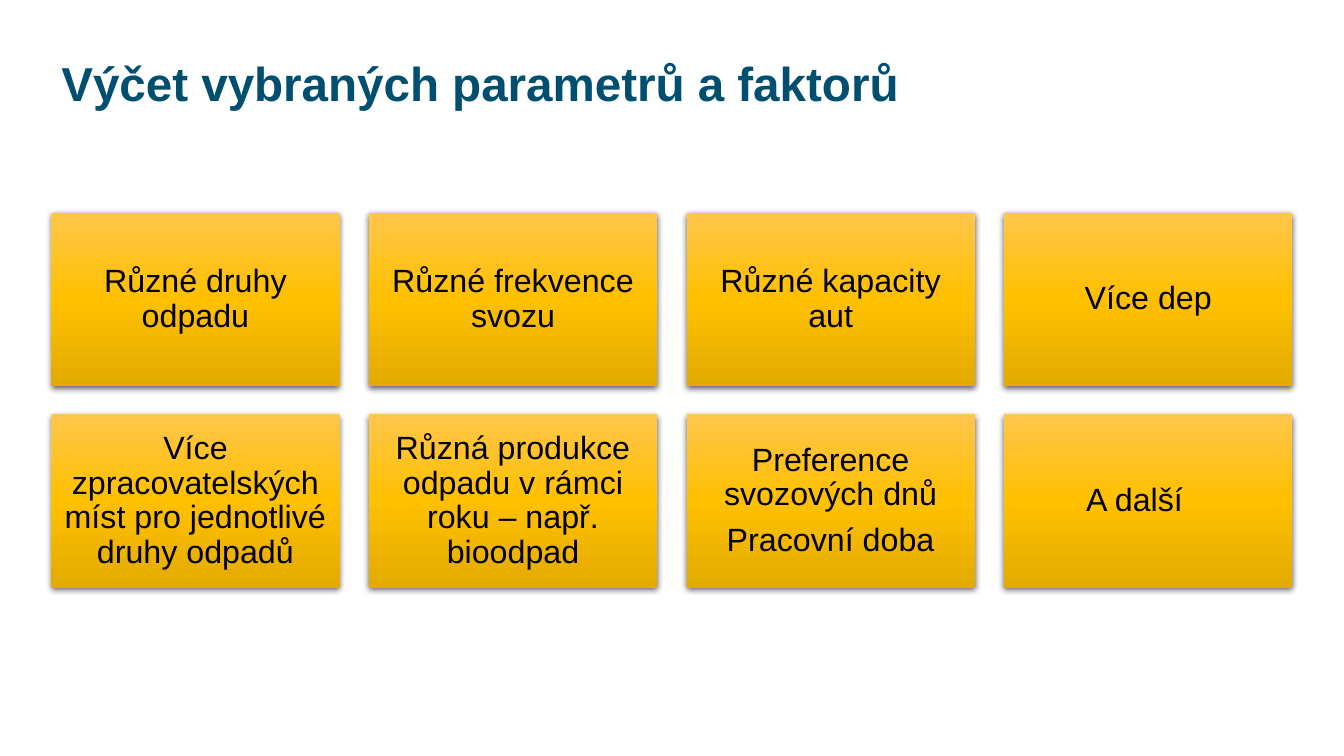
from copy import deepcopy

from pptx import Presentation, util as u
from pptx.dml.color import RGBColor
from pptx.enum import shapes, text
from pptx.oxml import parse_xml
from pptx.oxml.ns import nsdecls, qn

LEFT, TOP = 0.51, 2.11
CARD_W, CARD_H = 2.86, 1.72
STEP_X, STEP_Y = 3.15, 2.0
COLUMNS = 4
INSET = 0.1
GOLD = [(0, "FFC64B"), (0.5, "FFC000"), (1, "E3AB00")]
CARDS = [
    ["Různé druhy odpadu"],
    ["Různé frekvence svozu"],
    ["Různé kapacity aut"],
    ["Více dep"],
    ["Více zpracovatelských míst pro jednotlivé druhy odpadů"],
    ["Různá produkce odpadu v rámci roku – např. bioodpad"],
    ["Preference svozových dnů", "Pracovní doba"],
    ["A další"],
]


def color(value):
    return RGBColor.from_string(value)


def write(s, lines, size, ink, align, bold=False, after=0):
    tf = s.text_frame
    tf.word_wrap = True
    tf.vertical_anchor = text.MSO_ANCHOR.MIDDLE
    for i, line in enumerate(lines):
        p = tf.paragraphs[0] if i == 0 else tf.add_paragraph()
        p.text = line
        p.alignment = align
        p.line_spacing = 0.9
        p.space_after = u.Pt(after)
        p.font.name = "Arial"
        p.font.size = u.Pt(size)
        p.font.bold = bold
        p.font.color.rgb = color(ink)
    return tf


def fill_gradient(s, stops):
    s.fill.gradient()
    s.fill.gradient_angle = 270
    gs_list = s.fill.gradient_stops[0]._gs.getparent()
    while len(gs_list) < len(stops):
        gs_list.append(deepcopy(gs_list[0]))
    for stop, (position, value) in zip(s.fill.gradient_stops, stops):
        stop.position = position
        stop.color.rgb = color(value)


def add_shadow(s):
    s.shadow.inherit = False
    effects = s._element.spPr.find(qn("a:effectLst"))
    effects.append(parse_xml(
        f'<a:outerShdw {nsdecls("a")} blurRad="{u.Pt(4.5)}" dist="{u.Pt(1.5)}" '
        'dir="5400000" algn="ctr" rotWithShape="0"><a:srgbClr val="000000">'
        '<a:alpha val="63000"/></a:srgbClr></a:outerShdw>'))


def add_title(slide, title):
    s = slide.shapes.add_textbox(u.Inches(LEFT), u.Inches(0.19), u.Inches(12.31), u.Inches(1.32))
    write(s, [title], 34, "004F71", text.PP_ALIGN.LEFT, bold=True)


def add_card(slide, column, row, lines, extra_right=0):
    s = slide.shapes.add_shape(
        shapes.MSO_SHAPE.RECTANGLE,
        u.Inches(LEFT + column * STEP_X), u.Inches(TOP + row * STEP_Y),
        u.Inches(CARD_W), u.Inches(CARD_H))
    fill_gradient(s, GOLD)
    s.line.fill.background()
    add_shadow(s)
    tf = write(s, lines, 23, "000000", text.PP_ALIGN.CENTER, after=8)
    tf.margin_left = tf.margin_top = tf.margin_bottom = u.Inches(INSET)
    tf.margin_right = u.Inches(INSET + extra_right)


def main():
    prs = Presentation()
    prs.slide_width, prs.slide_height = u.Inches(13.33), u.Inches(7.5)
    slide = prs.slides.add_slide(prs.slide_layouts[6])
    add_title(slide, "Výčet vybraných parametrů a faktorů")
    for i, lines in enumerate(CARDS):
        row, column = divmod(i, COLUMNS)
        add_card(slide, column, row, lines, 0.27 if lines == CARDS[-1] else 0)
    prs.save("out.pptx")


if __name__ == "__main__":
    main()
